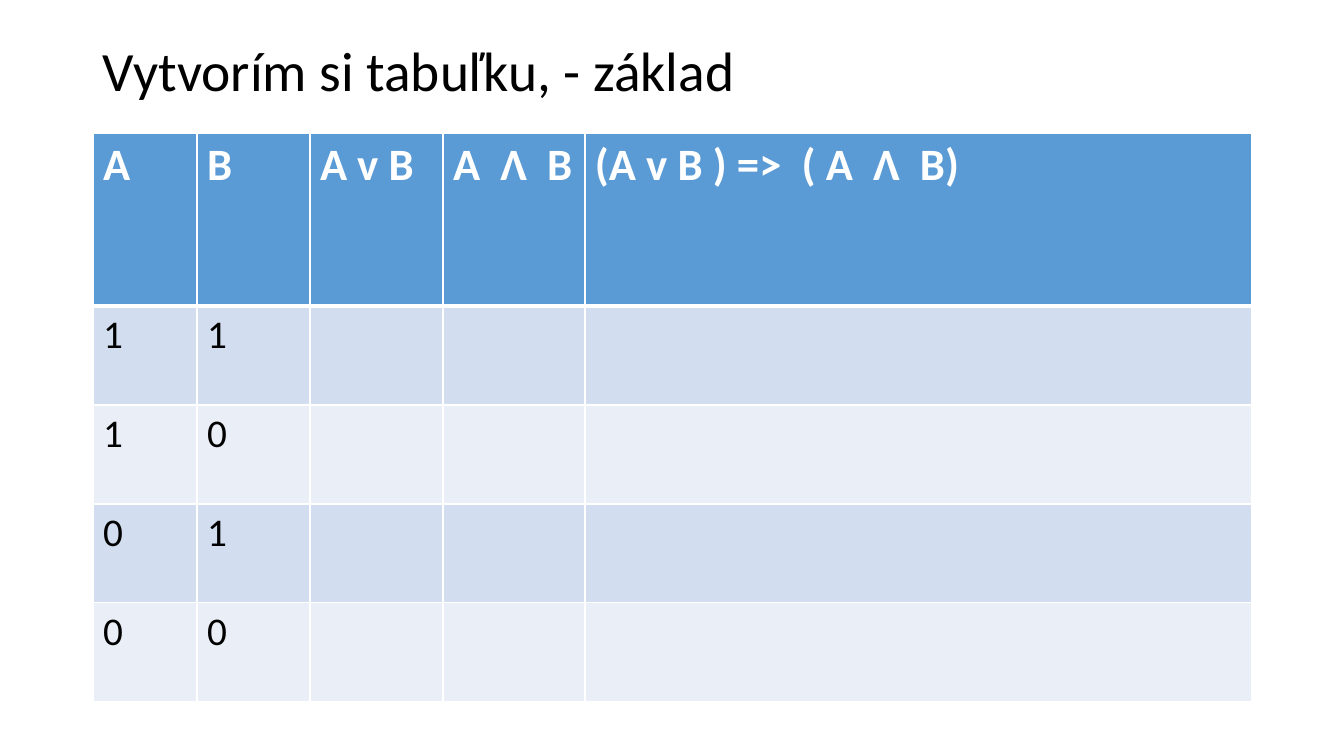
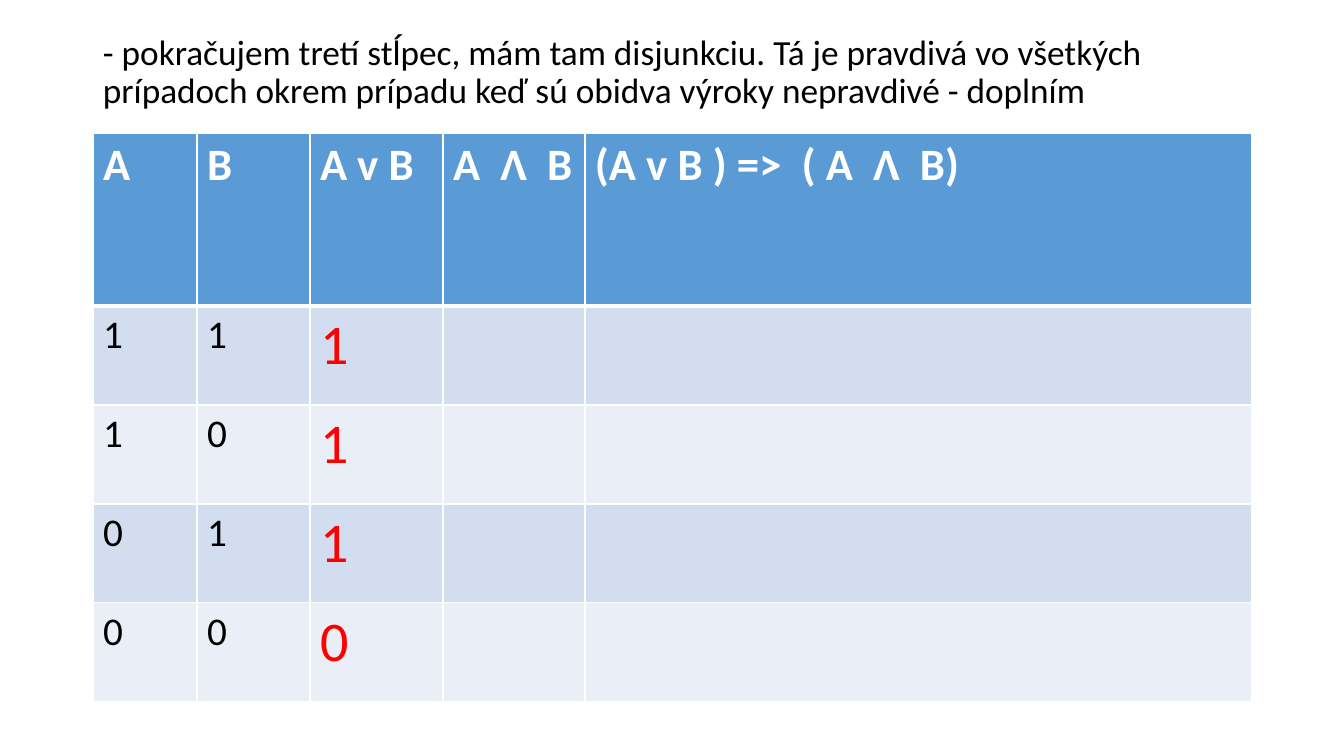
from dataclasses import dataclass
from itertools import product

from lxml.etree import SubElement
from pptx import Presentation
from pptx.dml.color import RGBColor as Rgb
from pptx.enum.text import MSO_ANCHOR as Anchor
from pptx.oxml.ns import qn
from pptx.util import Emu, Pt

EMU_PER_PX = 914400 / 100.8


@dataclass(frozen=True)
class Theme:
    font: str = "Calibri"
    ink: str = "000000"
    white: str = "FFFFFF"
    header_fill: str = "5B9BD5"
    bands: tuple[str, str] = ("D2DEEF", "EAEFF7")
    answer: str = "FF0000"
    header_size: float = 32
    value_size: float = 28
    answer_size: float = 40
    rule: float = 1
    header_rule: float = 3


@dataclass(frozen=True)
class Box:
    left: int
    top: int
    width: int
    height: int

    def emu(self) -> tuple[Emu, ...]:
        return tuple(map(px, (self.left, self.top, self.width, self.height)))


@dataclass(frozen=True)
class Step:
    title: str
    title_size: float
    show_disjunction: bool


@dataclass(frozen=True)
class Entry:
    text: str
    size: float
    color: str
    fill: str
    bold: bool = False
    top_rule: float = Theme.rule
    bottom_rule: float = Theme.rule


THEME = Theme()
SLIDE_SIZE = (1344, 756)
COLUMNS = (104, 113, 133, 142, 667)
HEADER_HEIGHT, ROW_HEIGHT = 173, 99
HEADINGS = ("A", "B", "A v B", "A  Ʌ  B", "(A v B ) =>  ( A  Ʌ  B)")
TRUTH_VALUES = tuple(product((1, 0), repeat=2))
TITLE_BOX = Box(93, 40, sum(COLUMNS), 67)
TABLE_BOX = Box(93, 133, sum(COLUMNS),
                HEADER_HEIGHT + ROW_HEIGHT * len(TRUTH_VALUES))

STEPS = (
    Step("Vytvorím si tabuľku, - základ", 39.6, False),
    Step("- pokračujem tretí stĺpec, mám tam disjunkciu. Tá je pravdivá vo "
         "všetkých prípadoch okrem prípadu keď sú obidva výroky nepravdivé "
         "- doplním", 25.2, True),
)


def px(length: int) -> Emu:
    return Emu(round(length * EMU_PER_PX))


def style_text(paragraph, size: float, color: str, bold: bool = False) -> None:
    for run in paragraph.runs:
        run.font.name = THEME.font
        run.font.size = Pt(size)
        run.font.bold = bold
        run.font.color.rgb = Rgb.from_string(color)


def draw_title(slide, step: Step) -> None:
    frame = slide.shapes.add_textbox(*TITLE_BOX.emu()).text_frame
    frame.word_wrap = True
    frame.vertical_anchor = Anchor.MIDDLE
    frame.text = step.title
    frame.paragraphs[0].line_spacing = 0.9
    style_text(frame.paragraphs[0], step.title_size, THEME.ink)


def draw_borders(cell, entry: Entry) -> None:
    properties = cell._tc.get_or_add_tcPr()
    rules = {"a:lnL": THEME.rule, "a:lnR": THEME.rule,
             "a:lnT": entry.top_rule, "a:lnB": entry.bottom_rule}
    for side, width in rules.items():
        line = SubElement(properties, qn(side), w=str(Pt(width)))
        paint = SubElement(line, qn("a:solidFill"))
        SubElement(paint, qn("a:srgbClr"), val=THEME.white)


def draw_cell(cell, entry: Entry) -> None:
    # Borders come before the fill in the cell properties
    draw_borders(cell, entry)
    cell.fill.solid()
    cell.fill.fore_color.rgb = Rgb.from_string(entry.fill)
    cell.text_frame.text = entry.text
    style_text(cell.text_frame.paragraphs[0], entry.size, entry.color, entry.bold)


def table_entries(step: Step) -> list[list[Entry]]:
    rows = [[Entry(heading, THEME.header_size, THEME.white, THEME.header_fill,
                   bold=True, bottom_rule=THEME.header_rule)
             for heading in HEADINGS]]
    for index, (a, b) in enumerate(TRUTH_VALUES):
        disjunction = str(a | b) if step.show_disjunction else ""
        top_rule = THEME.rule if index else THEME.header_rule
        rows.append([
            Entry(text,
                  THEME.answer_size if column == 2 else THEME.value_size,
                  THEME.answer if column == 2 else THEME.ink,
                  THEME.bands[index % 2], top_rule=top_rule)
            for column, text in enumerate((str(a), str(b), disjunction, "", ""))
        ])
    return rows


def draw_truth_table(slide, step: Step) -> None:
    entries = table_entries(step)
    table = slide.shapes.add_table(
        len(entries), len(COLUMNS), *TABLE_BOX.emu()).table
    for column, width in zip(table.columns, COLUMNS):
        column.width = px(width)
    for index, (row, row_entries) in enumerate(zip(table.rows, entries)):
        row.height = px(ROW_HEIGHT if index else HEADER_HEIGHT)
        for cell, entry in zip(row.cells, row_entries):
            draw_cell(cell, entry)


def main() -> None:
    deck = Presentation()
    deck.slide_width, deck.slide_height = map(px, SLIDE_SIZE)
    blank = deck.slide_layouts[6]
    for step in STEPS:
        slide = deck.slides.add_slide(blank)
        draw_title(slide, step)
        draw_truth_table(slide, step)
    deck.save("out.pptx")


if __name__ == "__main__":
    main()
